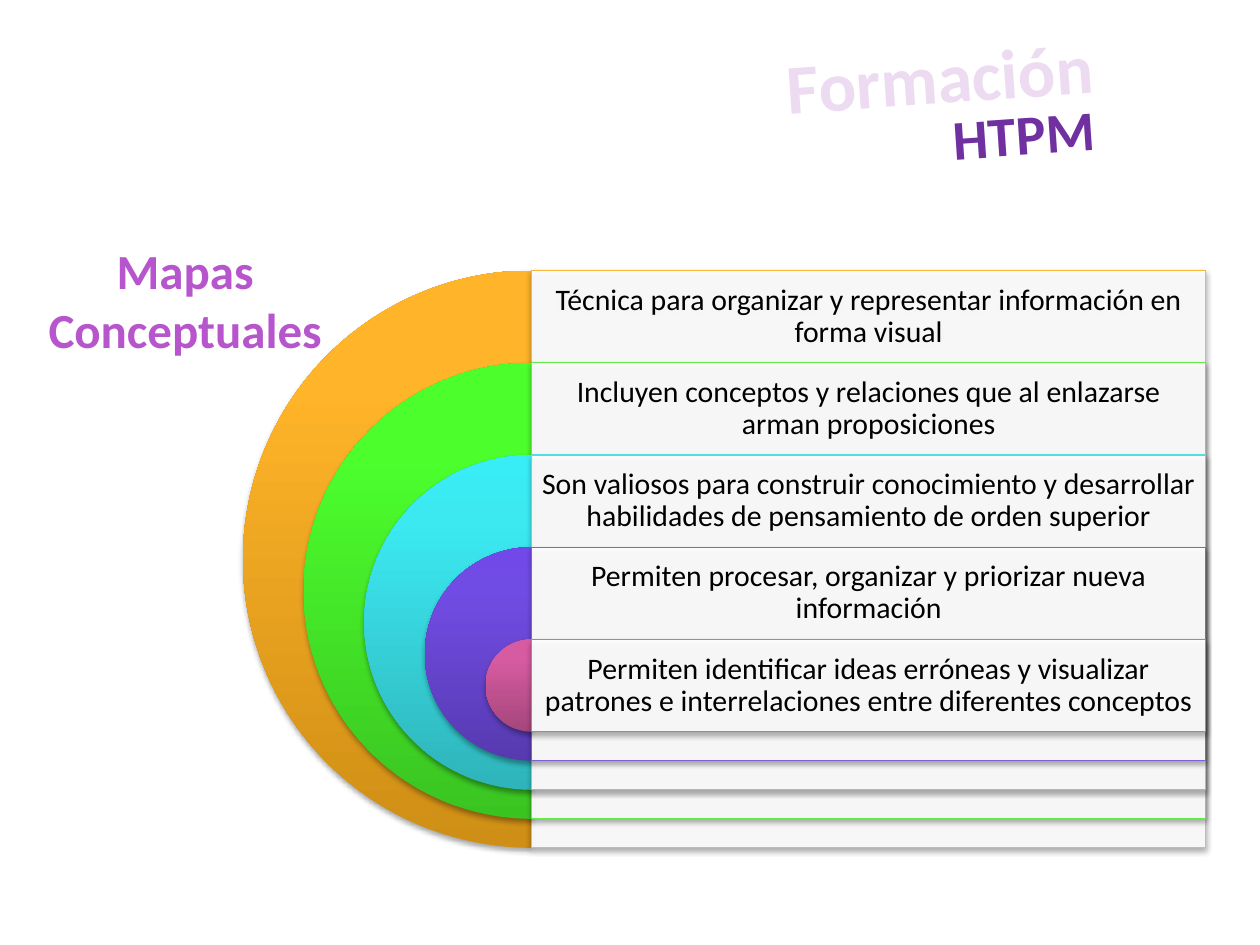
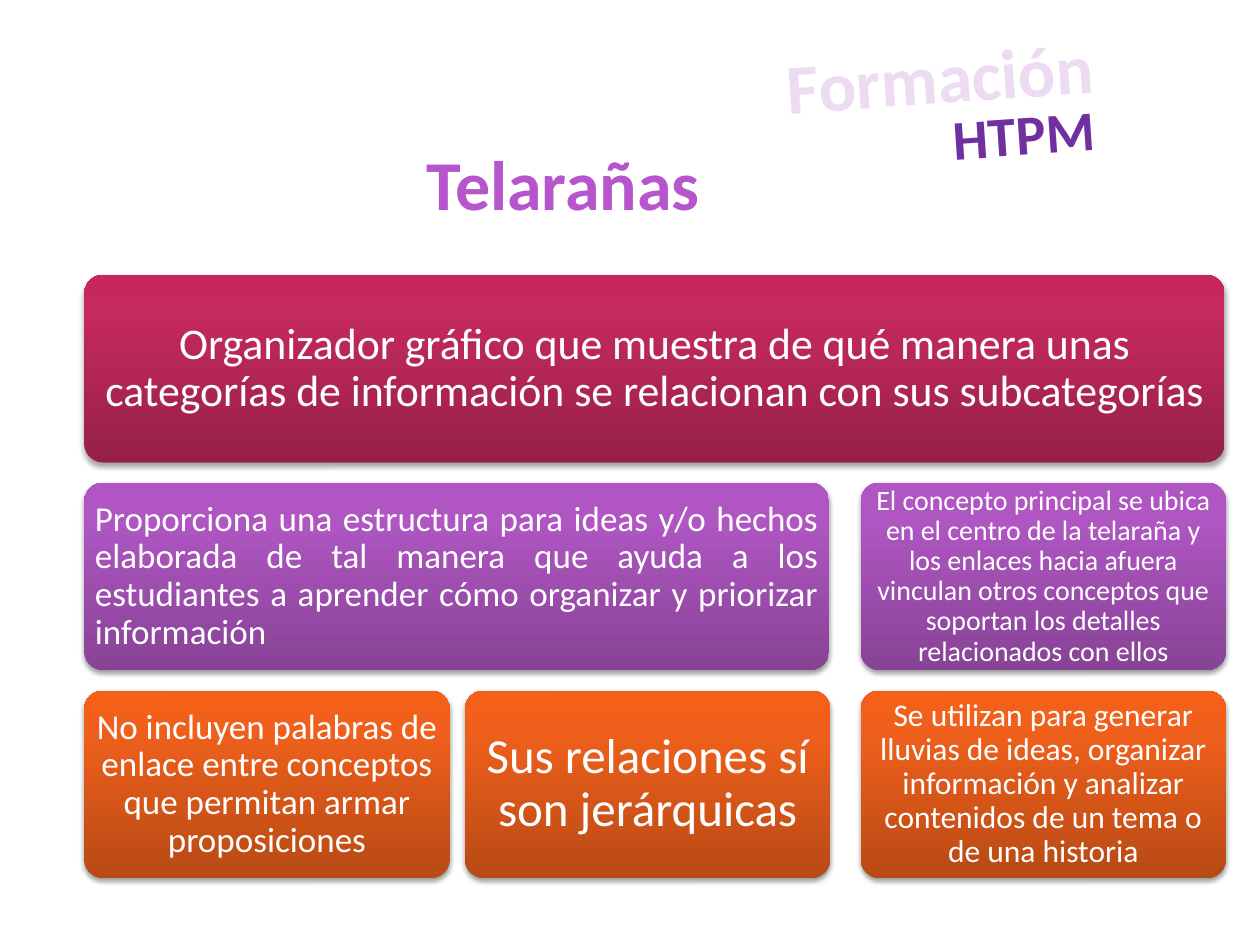
"""Build two slides on concept maps and webs."""
from copy import deepcopy
from pptx import Presentation
from pptx.dml.color import RGBColor
from pptx.enum import shapes, text
from pptx.oxml import ns, parse_xml
from pptx.util import Pt

hue = RGBColor.from_string
Kind = shapes.MSO_SHAPE
Mid, Just = text.PP_ALIGN.CENTER, text.PP_ALIGN.JUSTIFY
Top, Center = text.MSO_ANCHOR.TOP, text.MSO_ANCHOR.MIDDLE


def write(shape, words, size, tint, inset=(7.2, 3.6, 7.2, 3.6), anchor=Top,
          align=Mid, lead=1.0, bold=False, wrap=True):
    frame = shape.text_frame
    frame.word_wrap = wrap
    frame.vertical_anchor = anchor
    for side, gap in zip(("left", "top", "right", "bottom"), inset):
        setattr(frame, "margin_" + side, Pt(gap))
    frame.text = words
    style = {"name": "Calibri", "size": Pt(size), "bold": bold}
    for para in frame.paragraphs:
        para.alignment = align
        para.line_spacing = lead
        for key, value in style.items():
            setattr(para.font, key, value)
        para.font.color.rgb = hue(tint)


def block(slide, kind, box, tints, alpha=35, dist=1.8):
    shape = slide.shapes.add_shape(kind, *map(Pt, box))
    shape.line.fill.background()
    shape.shadow.inherit = False
    props = shape.element.spPr
    props.find(ns.qn("a:effectLst")).append(parse_xml(
        f'<a:outerShdw {ns.nsdecls("a")} blurRad="{Pt(3.1)}" '
        f'dist="{Pt(dist)}" dir="5400000" rotWithShape="0">'
        f'<a:srgbClr val="000000"><a:alpha val="{alpha * 1000}"/>'
        '</a:srgbClr></a:outerShdw>'))
    fill = shape.fill
    if len(tints) == 1:
        fill.solid()
        fill.fore_color.rgb = hue(tints[0])
        props.find(ns.qn("a:solidFill"))[0].append(parse_xml(
            f'<a:alpha {ns.nsdecls("a")} val="90000"/>'))
    else:
        fill.gradient()
        fill.gradient_angle = 90
        stops = props.find(".//" + ns.qn("a:gsLst"))
        stops.append(deepcopy(stops[0]))
        for stop, place, tint in zip(fill.gradient_stops, (0, 0.8, 1), tints):
            stop.position = place
            stop.color.rgb = hue(tint)
    return shape


deck = Presentation()
deck.slide_width, deck.slide_height = Pt(720), Pt(540)
heads = [
    ("Mapas\nConceptuales", 28, (19.4, 133.9, 172.8, 74.9)),
    ("Telarañas", 40, (235.4, 77, 172.8, 55.4)),
]
brand = [
    ("HTPM", 32, "7030A0", (522.7, 53.3, 124.6, 46.1), 356.1),
    ("Formación", 40, "ECDBF1", (441.4, 15.8, 191.5, 55.4), 356),
]
for _ in heads:
    slide = deck.slides.add_slide(deck.slide_layouts[6])
    for words, size, tint, box, turn in brand:
        label = slide.shapes.add_textbox(*map(Pt, box))
        label.rotation = turn
        write(label, words, size, tint, bold=True, wrap=False)
maps, webs = deck.slides

rings = [
    ("Técnica para organizar y representar información en forma visual",
     ("CF8E15", "FFB429", "FFB52B"), "F9B639"),
    ("Incluyen conceptos y relaciones que al enlazarse arman proposiciones",
     ("3AC422", "4CFF2C", "4DFF2D"), "60EE46"),
    ("Son valiosos para construir conocimiento y desarrollar habilidades "
     "de pensamiento de orden superior",
     ("2EB4BA", "3CE9F1", "39EDF6"), "54DDE3"),
    ("Permiten procesar, organizar y priorizar nueva información",
     ("573AB0", "714CE4", "7049E8"), "7E60D9"),
    ("Permiten identificar ideas erróneas y visualizar patrones e "
     "interrelaciones entre diferentes conceptos",
     ("A5467C", "D75BA1", "DA59A2"), "CF6DA4"),
]
axis, band = 303.8, 52.7
for i, (words, tints, edge) in enumerate(rings):
    top, size = 154.6 + band * i, 329.9 - 69.3 * i
    pie = block(maps, Kind.PIE, (axis - size / 2, top, size, size), tints)
    pie.adjustments[0], pie.adjustments[1] = 54, 162
    card = block(maps, Kind.RECTANGLE, (axis, top, 385.2, size), ["FFFFFF"])
    card.line.color.rgb = hue(edge)
    card.line.width = Pt(0.75)
    write(card, words, 17, "000000", (5, 5, 5, size - band + 5), Center,
          lead=0.9)

tones = [
    ("972049", "C4295F", "C8265F"),
    ("874395", "AF56C2", "B155C5"),
    ("B84A15", "F0601C", "F55F18"),
]
cols = (48.2, 265.7, 491.8)
cells = [
    (0, 0, 651.6, 25, 7.2, Mid,
     "Organizador gráfico que muestra de qué manera unas categorías de "
     "información se relacionan con sus subcategorías"),
    (1, 0, 425.5, 20, 6, Just,
     "Proporciona una estructura para ideas y/o hechos elaborada de tal "
     "manera que ayuda a los estudiantes a aprender cómo organizar y "
     "priorizar información"),
    (2, 0, 208.8, 20, 6, Mid,
     "No incluyen palabras de enlace entre conceptos que permitan armar "
     "proposiciones"),
    (2, 1, 208.8, 28, 8.4, Mid, "Sus relaciones sí son jerárquicas"),
    (1, 2, 208.8, 16, 5, Mid,
     "El concepto principal se ubica en el centro de la telaraña y los "
     "enlaces hacia afuera vinculan otros conceptos que soportan los "
     "detalles relacionados con ellos"),
    (2, 2, 208.8, 18, 5, Mid,
     "Se utilizan para generar lluvias de ideas, organizar información y "
     "analizar contenidos de un tema o de una historia"),
]
for row, col, width, size, pad, align, words in cells:
    alpha, dist = (38, 1.6) if row else (35, 1.8)
    box = (cols[col], 157 + 118.8 * row, width, 107.3)
    tile = block(webs, Kind.ROUNDED_RECTANGLE, box, tones[row], alpha, dist)
    tile.adjustments[0] = 0.1
    inner = (pad - 3.1, pad - 3.1, pad - 3.1, pad - 3.1)
    write(tile, words, size, "FFFFFF", inner, Center, align, 0.9)

for slide, (words, size, box) in zip(deck.slides, heads):
    title = slide.shapes.add_textbox(*map(Pt, box))
    write(title, words, size, "B755CC", bold=True, wrap=False)

deck.save("out.pptx")
